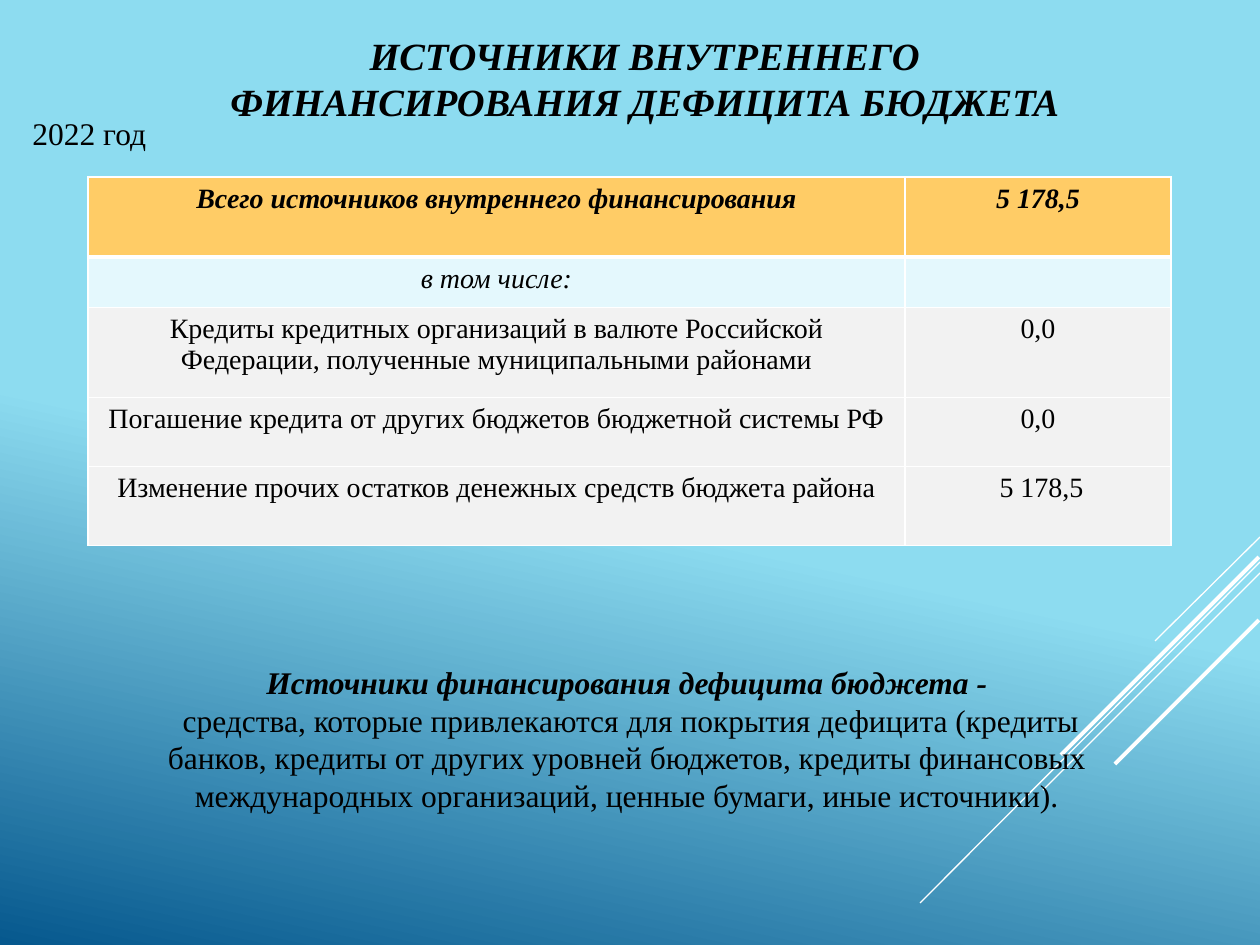
from lxml.etree import SubElement
from pptx import Presentation
from pptx.dml.color import RGBColor
from pptx.enum.shapes import MSO_CONNECTOR, MSO_SHAPE
from pptx.enum.text import MSO_ANCHOR, MSO_AUTO_SIZE, PP_ALIGN
from pptx.oxml.ns import qn
from pptx.util import Emu, Pt

PX_PER_INCH = 126
FONT = "Times New Roman"
BLACK = RGBColor(0x00, 0x00, 0x00)
WHITE = RGBColor(0xFF, 0xFF, 0xFF)
SKY = RGBColor(0x8D, 0xDC, 0xF0)
DEEP_BLUE = RGBColor(0x06, 0x58, 0x8E)
AMBER = RGBColor(0xFF, 0xCC, 0x66)
PALE_BLUE = RGBColor(0xE4, 0xF8, 0xFD)
PALE_GRAY = RGBColor(0xF2, 0xF2, 0xF2)


def px(length):
    return Emu(round(length * 914400 / PX_PER_INCH))


def write(paragraph, text, size=18, bold=False, italic=False, align=PP_ALIGN.CENTER):
    paragraph.text = text
    paragraph.alignment = align
    for run in paragraph.runs:
        font = run.font
        font.name = FONT
        font.size = Pt(size)
        font.bold = bold
        font.italic = italic
        font.color.rgb = BLACK


def set_border(cell, side, width):
    properties = cell._tc.get_or_add_tcPr()
    line = SubElement(properties, qn(f"a:ln{side}"), w=str(Pt(width)))
    fill = SubElement(line, qn("a:solidFill"))
    SubElement(fill, qn("a:srgbClr"), val=str(WHITE))


class SlideBuilder:
    def __init__(self, presentation):
        self.slide = presentation.slides.add_slide(presentation.slide_layouts[5])
        self.shapes = self.slide.shapes

    def background(self, stops, angle):
        fill = self.slide.background.fill
        fill.gradient()
        fill.gradient_angle = angle
        for stop, (position, color) in zip(fill.gradient_stops, stops):
            stop.position = position
            stop.color.rgb = color

    def title(self, text, left, top, width, height):
        title = self.shapes.title
        title.left, title.top = px(left), px(top)
        title.width, title.height = px(width), px(height)
        frame = title.text_frame
        frame.auto_size = MSO_AUTO_SIZE.NONE
        frame.vertical_anchor = MSO_ANCHOR.MIDDLE
        write(frame.paragraphs[0], text, size=22, bold=True, italic=True)

    def line(self, start, end, width):
        connector = self.shapes.add_connector(
            MSO_CONNECTOR.STRAIGHT, *map(px, start), *map(px, end))
        connector.line.color.rgb = WHITE
        connector.line.width = Pt(width)
        SubElement(connector._element.spPr, qn("a:effectLst"))

    def label(self, text, left, top, width, height):
        box = self.shapes.add_textbox(px(left), px(top), px(width), px(height))
        box.text_frame.word_wrap = True
        box.text_frame.auto_size = MSO_AUTO_SIZE.SHAPE_TO_FIT_TEXT
        write(box.text_frame.paragraphs[0], text, align=PP_ALIGN.LEFT)

    def table(self, rows, left, top, column_widths, row_heights):
        table = self.shapes.add_table(
            len(rows), len(column_widths), px(left), px(top),
            px(sum(column_widths)), px(sum(row_heights))).table
        for column, width in zip(table.columns, column_widths):
            column.width = px(width)
        for index, (values, color, style) in enumerate(rows):
            table.rows[index].height = px(row_heights[index])
            for cell, value in zip(table.rows[index].cells, values):
                write(cell.text_frame.paragraphs[0], value, size=16, **style)
                for side in "LRTB":
                    under_header = (index, side) in ((0, "B"), (1, "T"))
                    set_border(cell, side, 3 if under_header else 1)
                cell.fill.solid()
                cell.fill.fore_color.rgb = color

    def definition(self, term, meaning, left, top, width, height):
        shape = self.shapes.add_shape(
            MSO_SHAPE.ROUNDED_RECTANGLE, px(left), px(top), px(width), px(height))
        shape.adjustments[0] = 0.1
        shape.shadow.inherit = False
        shape.fill.background()
        shape.line.fill.background()
        frame = shape.text_frame
        frame.word_wrap = True
        frame.vertical_anchor = MSO_ANCHOR.TOP
        write(frame.paragraphs[0], term, bold=True, italic=True)
        write(frame.add_paragraph(), meaning)


def main():
    presentation = Presentation()
    presentation.slide_width = px(1260)
    presentation.slide_height = px(945)
    builder = SlideBuilder(presentation)

    builder.background([(0.54, SKY), (1, DEEP_BLUE)], angle=258)
    for start, end, width in [
        ((1260, 537), (1155, 641), 0.75),
        ((1260, 562), (920, 903), 0.75),
        ((1260, 573), (1043, 790), 0.75),
        ((1259, 557), (1061, 755), 2.25),
        ((1259, 620), (1115, 764), 2.25),
    ]:
        builder.line(start, end, width)

    builder.title("ИСТОЧНИКИ ВНУТРЕННЕГО \vФИНАНСИРОВАНИЯ ДЕФИЦИТА БЮДЖЕТА ",
                  39, 37, 1221, 82)
    builder.label("2022 год", 20, 108, 158, 50)

    header = dict(bold=True, italic=True)
    rows = [
        (("Всего источников внутреннего финансирования", "5 178,5"), AMBER, header),
        (("в том числе:", ""), PALE_BLUE, dict(italic=True)),
        (("Кредиты кредитных организаций в валюте Российской Федерации, "
          "полученные муниципальными районами", "0,0"), PALE_GRAY, {}),
        (("Погашение кредита от других бюджетов бюджетной системы РФ", "0,0"),
         PALE_GRAY, {}),
        (("Изменение прочих остатков денежных средств бюджета района", " 5 178,5"),
         PALE_GRAY, {}),
    ]
    builder.table(rows, 88, 177, [817, 266], [80, 46, 90, 69, 79])

    builder.definition(
        "Источники финансирования дефицита бюджета -",
        " средства, которые привлекаются для покрытия дефицита (кредиты банков, "
        "кредиты от других уровней бюджетов, кредиты финансовых международных "
        "организаций, ценные бумаги, иные источники).",
        123, 650, 1008, 227)

    presentation.save("out.pptx")


if __name__ == "__main__":
    main()
